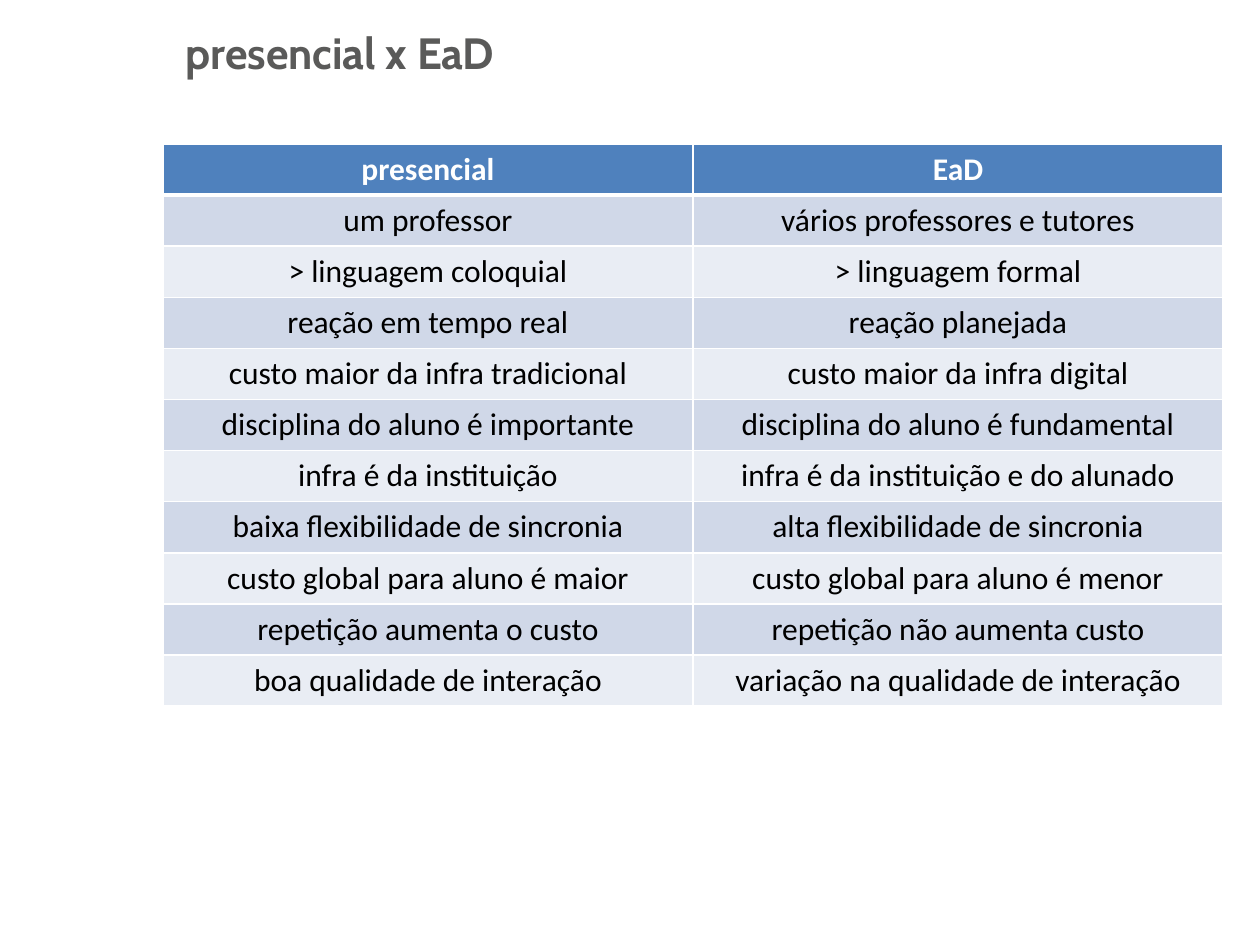
from dataclasses import dataclass

from lxml.etree import SubElement
from pptx import Presentation
from pptx.dml.color import RGBColor
from pptx.enum.text import MSO_ANCHOR, MSO_AUTO_SIZE, PP_ALIGN
from pptx.oxml.ns import qn
from pptx.util import Pt

SCALE = 914400 / 126


@dataclass(frozen=True)
class Theme:
    title: str = "5A5A59"
    head: str = "4F81BD"
    odd: str = "D0D8E8"
    even: str = "E9EDF4"
    white: str = "FFFFFF"
    black: str = "000000"
    title_font: str = "Cabin"
    body_font: str = "Calibri"
    title_size: int = 25
    body_size: int = 18
    thin: int = 1
    thick: int = 3


THEME = Theme()

ROWS = [
    ("presencial", "EaD"),
    ("um professor", "vários professores e tutores"),
    ("> linguagem coloquial", "> linguagem formal"),
    ("reação em tempo real", "reação planejada"),
    ("custo maior da infra tradicional", "custo maior da infra digital"),
    ("disciplina do aluno é importante", "disciplina do aluno é fundamental"),
    ("infra é da instituição", "infra é da instituição e do alunado"),
    ("baixa flexibilidade de sincronia", "alta flexibilidade de sincronia"),
    ("custo global para aluno é maior", "custo global para aluno é menor"),
    ("repetição aumenta o custo", "repetição não aumenta custo"),
    ("boa qualidade de interação", "variação na qualidade de interação"),
]


def px(count):
    return round(count * SCALE)


def put_text(frame, text, *, font, size, color, bold=False, align=PP_ALIGN.LEFT):
    para = frame.paragraphs[0]
    para.alignment = align
    run = para.add_run()
    run.text = text
    run.font.name = font
    run.font.size = Pt(size)
    run.font.bold = bold
    run.font.color.rgb = RGBColor.from_string(color)


def add_title(slide, text):
    title = slide.shapes.title
    title.left, title.top, title.width, title.height = map(px, (173, 19, 1031, 86))
    frame = title.text_frame
    frame.auto_size = MSO_AUTO_SIZE.NONE
    frame.vertical_anchor = MSO_ANCHOR.TOP
    put_text(frame, text, font=THEME.title_font, size=THEME.title_size,
             color=THEME.title, bold=True)


def set_edges(cell, **widths):
    """Draw white cell borders; call before the fill, which must follow them."""
    props = cell._tc.get_or_add_tcPr()
    for side in "LRTB":
        width = widths.get(side, THEME.thin)
        line = SubElement(props, qn(f"a:ln{side}"), w=str(Pt(width)))
        fill = SubElement(line, qn("a:solidFill"))
        SubElement(fill, qn("a:srgbClr"), val=THEME.white)


def style_cell(cell, text, row):
    head = row == 0
    if head:
        set_edges(cell, B=THEME.thick)
        fill = THEME.head
    else:
        set_edges(cell, T=THEME.thick if row == 1 else THEME.thin)
        fill = THEME.odd if row % 2 else THEME.even
    cell.fill.solid()
    cell.fill.fore_color.rgb = RGBColor.from_string(fill)
    put_text(cell.text_frame, text, font=THEME.body_font, size=THEME.body_size,
             color=THEME.white if head else THEME.black, bold=head,
             align=PP_ALIGN.CENTER)


def add_grid(slide, rows, left, top, col_width, row_height):
    count, cols = len(rows), len(rows[0])
    table = slide.shapes.add_table(count, cols, px(left), px(top),
                                   px(col_width * cols),
                                   px(row_height * count)).table
    table.horz_banding = False
    for row, texts in enumerate(rows):
        table.rows[row].height = px(row_height)
        for col, text in enumerate(texts):
            style_cell(table.cell(row, col), text, row)


def main():
    deck = Presentation()
    deck.slide_width, deck.slide_height = px(1260), px(945)
    slide = deck.slides.add_slide(deck.slide_layouts[5])
    add_title(slide, "presencial x EaD")
    add_grid(slide, ROWS, left=163, top=144, col_width=530, row_height=51)
    deck.save("out.pptx")


if __name__ == "__main__":
    main()
